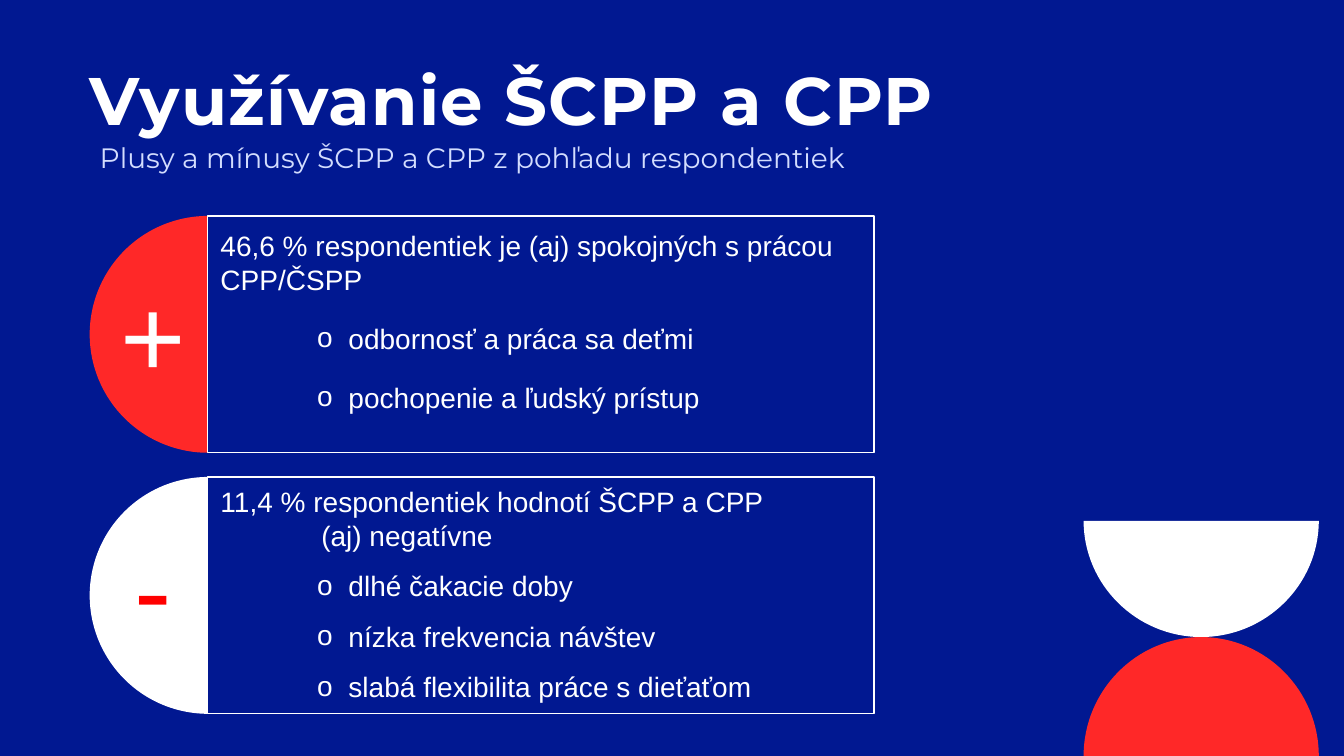
from dataclasses import dataclass

from lxml.etree import SubElement
from pptx import Presentation
from pptx.dml.color import RGBColor
from pptx.enum.shapes import MSO_SHAPE
from pptx.enum.text import MSO_ANCHOR
from pptx.oxml.ns import qn
from pptx.util import Inches, Pt


@dataclass(frozen=True)
class Theme:
    navy: str = "011891"
    white: str = "FFFFFF"
    red: str = "FF2828"
    minus: str = "FF0000"
    pale: str = "D3DDFE"
    head: str = "Montserrat"
    body: str = "Arial"
    title: int = 48
    text: int = 20
    sign: int = 80


def write(frame, text, size, color, font, bold=False, track=0, before=0,
          lead=None, bullet=None, tab=None):
    """Add one formatted paragraph to a text frame."""
    first = frame.paragraphs[0]
    para = first if not first.runs else frame.add_paragraph()
    para.text = text
    if before:
        para.space_before = Pt(before)
    if lead:
        para.line_spacing = lead
    props = para._p.get_or_add_pPr()
    if bullet:
        props.set("marL", str(Inches(1.27)))
        props.set("indent", str(Inches(-0.31)))
        SubElement(props, qn("a:buFont")).set("typeface", font)
        SubElement(props, qn("a:buChar")).set("char", bullet)
    if tab:
        stop = SubElement(SubElement(props, qn("a:tabLst")), qn("a:tab"))
        stop.set("pos", str(Inches(tab)))
        stop.set("algn", "l")
    for run in para.runs:
        run.font.name = font
        run.font.size = Pt(size)
        run.font.bold = bold
        run.font.color.rgb = RGBColor.from_string(color)
        if track:
            run._r.get_or_add_rPr().set("spc", str(track * 100))


class Board:
    """A slide on a grid of 160 columns by 90 rows."""

    def __init__(self, theme):
        self.theme = theme
        self.deck = Presentation()
        self.deck.slide_width = Inches(13.33)
        self.deck.slide_height = Inches(7.5)
        self.slide = self.deck.slides.add_slide(self.deck.slide_layouts[6])
        self.paint(self.slide.background.fill, theme.navy)

    def x(self, cols):
        return round(self.deck.slide_width * cols / 160)

    def y(self, rows):
        return round(self.deck.slide_height * rows / 90)

    def area(self, col, row, wide, high):
        return self.x(col), self.y(row), self.x(wide), self.y(high)

    def paint(self, fill, color):
        fill.solid()
        fill.fore_color.rgb = RGBColor.from_string(color)

    def finish(self, shape, fill, line=None):
        shape.shadow.inherit = False
        self.paint(shape.fill, fill)
        if line:
            self.paint(shape.line.fill, line)
            shape.line.width = Pt(1)
        else:
            shape.line.fill.background()

    def shape(self, kind, area, fill, line=None):
        item = self.slide.shapes.add_shape(kind, *self.area(*area))
        self.finish(item, fill, line)

    def half(self, col, row, wide, high, fill):
        """Draw a half disc; a negative height stands it up."""
        bend = 0.55
        marks = [(1, 0), (1, bend), (bend, 1), (0, 1),
                 (-bend, 1), (-1, bend), (-1, 0)]
        spots = [(self.x(col + wide * a), self.y(row + high * b))
                 for a, b in marks]
        form = self.slide.shapes.build_freeform(*spots[0])
        form.add_line_segments(spots[1:], close=True)
        item = form.convert_to_shape()
        # Join each three segments into one curve
        steps = list(item._element.iter(qn("a:lnTo")))
        for i in range(0, 6, 3):
            curve = steps[i].makeelement(qn("a:cubicBezTo"))
            steps[i].addprevious(curve)
            for step in steps[i:i + 3]:
                curve.append(step[0])
                step.getparent().remove(step)
        self.finish(item, fill)

    def text(self, area, pad=True, anchor=MSO_ANCHOR.TOP):
        frame = self.slide.shapes.add_textbox(*self.area(*area)).text_frame
        frame.word_wrap = True
        frame.vertical_anchor = anchor
        if not pad:
            frame.margin_left = frame.margin_right = 0
            frame.margin_top = frame.margin_bottom = 0
        return frame


def main():
    look = Theme()
    board = Board(look)
    left, disc, mid = 10.68, 28.2, 24.74

    # Corner half discs
    board.half(143, 62, 14, 13.84, look.white)
    board.half(143, 90, 14, -14.16, look.red)

    # Heading
    write(board.text((left, 7.7, 131.3, 9), pad=False,
                     anchor=MSO_ANCHOR.BOTTOM),
          "Využívanie ŠCPP a CPP", look.title, look.white, look.head,
          bold=True, track=1, lead=0.9)
    write(board.text((left, 16.1, 102, 5.3)),
          "Plusy a mínusy ŠCPP a CPP z pohľadu respondentiek",
          look.text, look.pale, look.head)

    # Panels: row, disc fill, sign, sign colour, sign area,
    # text area, bullet gap, lead line, points
    panels = [
        (56.78, look.white, "-", look.minus, (14.85, 61.1, 7, 17.4),
         (25.06, 57.14, 87.6, 27.5), 12,
         "11,4 % respondentiek hodnotí ŠCPP a CPP\v\t(aj) negatívne",
         ["dlhé čakacie doby", "nízka frekvencia návštev",
          "slabá flexibilita práce s dieťaťom"]),
        (25.7, look.red, "+", look.white, (13.2, 31, 10.4, 17.4),
         (25.06, 26.64, 79.1, 23.6), 18,
         "46,6 % respondentiek je (aj) spokojných s prácou CPP/ČSPP",
         ["odbornosť a práca sa deťmi", "pochopenie a ľudský prístup"]),
    ]
    for row, fill, sign, ink, spot, area, gap, lead, points in panels:
        board.shape(MSO_SHAPE.OVAL, (left, row, disc, disc), fill)
        board.shape(MSO_SHAPE.RECTANGLE, (mid, row, 79.3, disc),
                    look.navy, look.white)
        frame = board.text(area)
        write(frame, lead, look.text, look.white, look.body, tab=1)
        for point in points:
            write(frame, point, look.text, look.white, look.body,
                  before=gap, bullet="o")
        write(board.text(spot), sign, look.sign, ink, look.body)

    board.deck.save("out.pptx")


if __name__ == "__main__":
    main()
